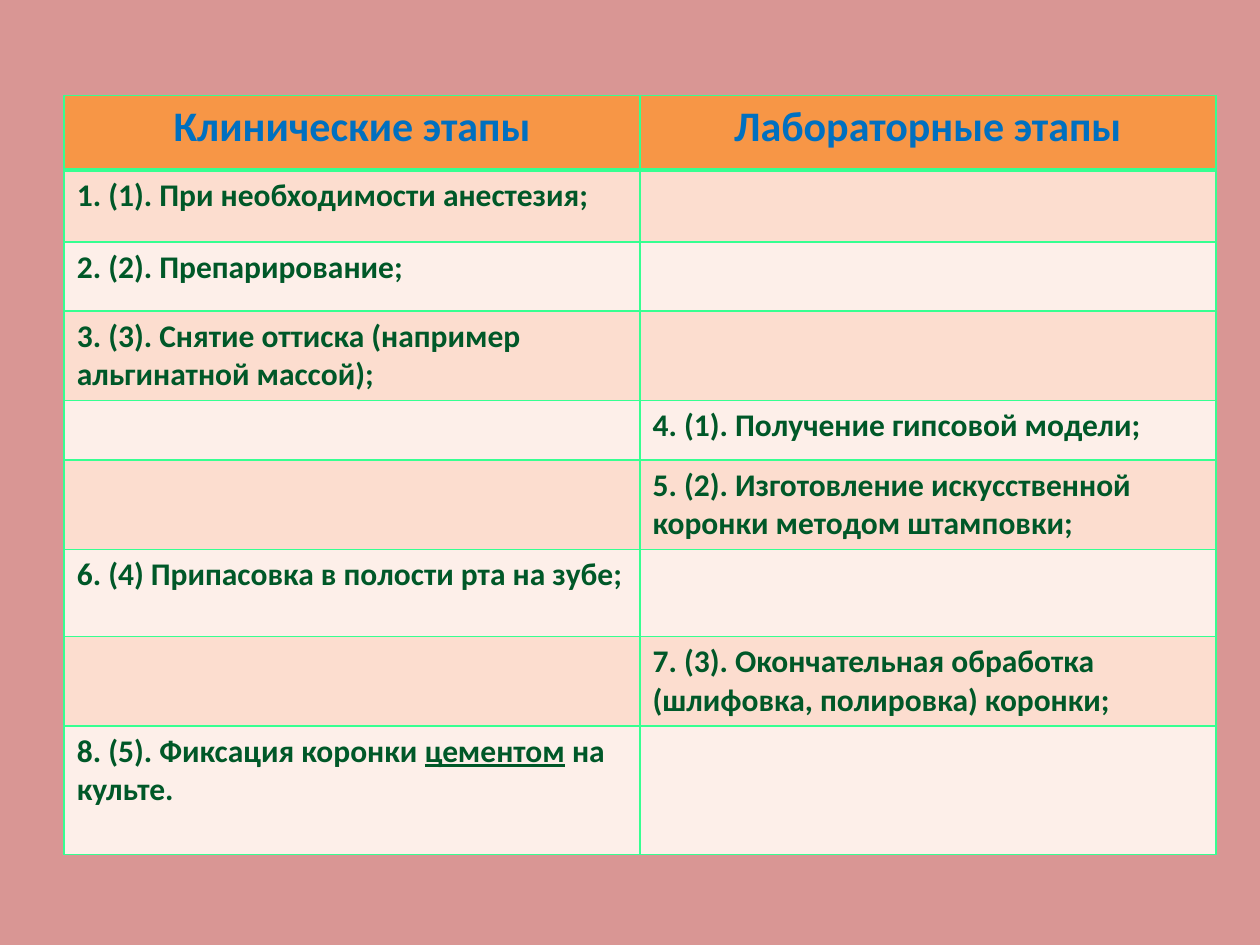
from lxml import etree
from pptx import Presentation
from pptx.dml.color import RGBColor
from pptx.enum.text import PP_ALIGN
from pptx.oxml.ns import qn
from pptx.util import Inches, Pt

CENTER = PP_ALIGN.CENTER
LEFT = PP_ALIGN.LEFT

BACKGROUND = "D99694"
HEADER_FILL = "F79646"
BAND_FILLS = ("FDEFE9", "FCDDCF")
HEADER_TEXT = "0070C0"
BODY_TEXT = "005828"
BORDER = "36FF91"

HEADERS = ("Клинические этапы", "Лабораторные этапы")
CLINICAL, LABORATORY = 0, 1
STAGES = [
    (CLINICAL, 0.57, ["1. (1). При необходимости анестезия;"]),
    (CLINICAL, 0.55, ["2. (2). Препарирование;"]),
    (CLINICAL, 0.7, ["3. (3). Снятие оттиска (например альгинатной массой);"]),
    (LABORATORY, 0.47, ["4. (1). Получение гипсовой модели;"]),
    (LABORATORY, 0.71, ["5. (2). Изготовление искусственной коронки методом штамповки;"]),
    (CLINICAL, 0.69, ["6. (4) Припасовка в полости рта на зубе;"]),
    (LABORATORY, 0.71, ["7. (3). Окончательная обработка (шлифовка, полировка) коронки;"]),
    (CLINICAL, 1.02, ["8. (5). Фиксация коронки ", "цементом", " на культе."]),
]
UNDERLINED = "цементом"
HEADER_HEIGHT = 0.59


def rgb(value):
    return RGBColor.from_string(value)


def set_borders(cell, top=1, bottom=1):
    tc_pr = cell._tc.get_or_add_tcPr()
    widths = {"a:lnL": 1, "a:lnR": 1, "a:lnT": top, "a:lnB": bottom}
    for i, (tag, width) in enumerate(widths.items()):
        ln = etree.Element(qn(tag), w=str(Pt(width)))
        fill = etree.SubElement(ln, qn("a:solidFill"))
        etree.SubElement(fill, qn("a:srgbClr"), val=BORDER)
        tc_pr.insert(i, ln)


def fill_cell(cell, color):
    cell.fill.solid()
    cell.fill.fore_color.rgb = rgb(color)


def write_cell(cell, parts, size, color, align):
    p = cell.text_frame.paragraphs[0]
    p.alignment = align
    for part in parts:
        r = p.add_run()
        r.text = part
        r.font.name = "Calibri"
        r.font.size = Pt(size)
        r.font.bold = True
        r.font.underline = part == UNDERLINED
        r.font.color.rgb = rgb(color)


def add_stages_table(slide, left, top, width):
    heights = [HEADER_HEIGHT] + [height for _, height, _ in STAGES]
    table = slide.shapes.add_table(
        len(heights), len(HEADERS), left, top, width, Inches(sum(heights))
    ).table
    for row, height in zip(table.rows, heights):
        row.height = Inches(height)

    for col, title in enumerate(HEADERS):
        cell = table.cell(0, col)
        fill_cell(cell, HEADER_FILL)
        set_borders(cell, bottom=3)
        write_cell(cell, [title], 24, HEADER_TEXT, CENTER)

    for row, (stage_col, _, parts) in enumerate(STAGES, start=1):
        for col in range(len(HEADERS)):
            cell = table.cell(row, col)
            fill_cell(cell, BAND_FILLS[row % 2])
            set_borders(cell, top=3 if row == 1 else 1)
        write_cell(table.cell(row, stage_col), parts, 18, BODY_TEXT, LEFT)


def main():
    prs = Presentation()
    prs.slide_width = Inches(10)
    prs.slide_height = Inches(7.5)
    slide = prs.slides.add_slide(prs.slide_layouts[6])
    slide.background.fill.solid()
    slide.background.fill.fore_color.rgb = rgb(BACKGROUND)
    add_stages_table(slide, Inches(0.51), Inches(0.76), Inches(9.14))
    prs.save("out.pptx")


if __name__ == "__main__":
    main()
